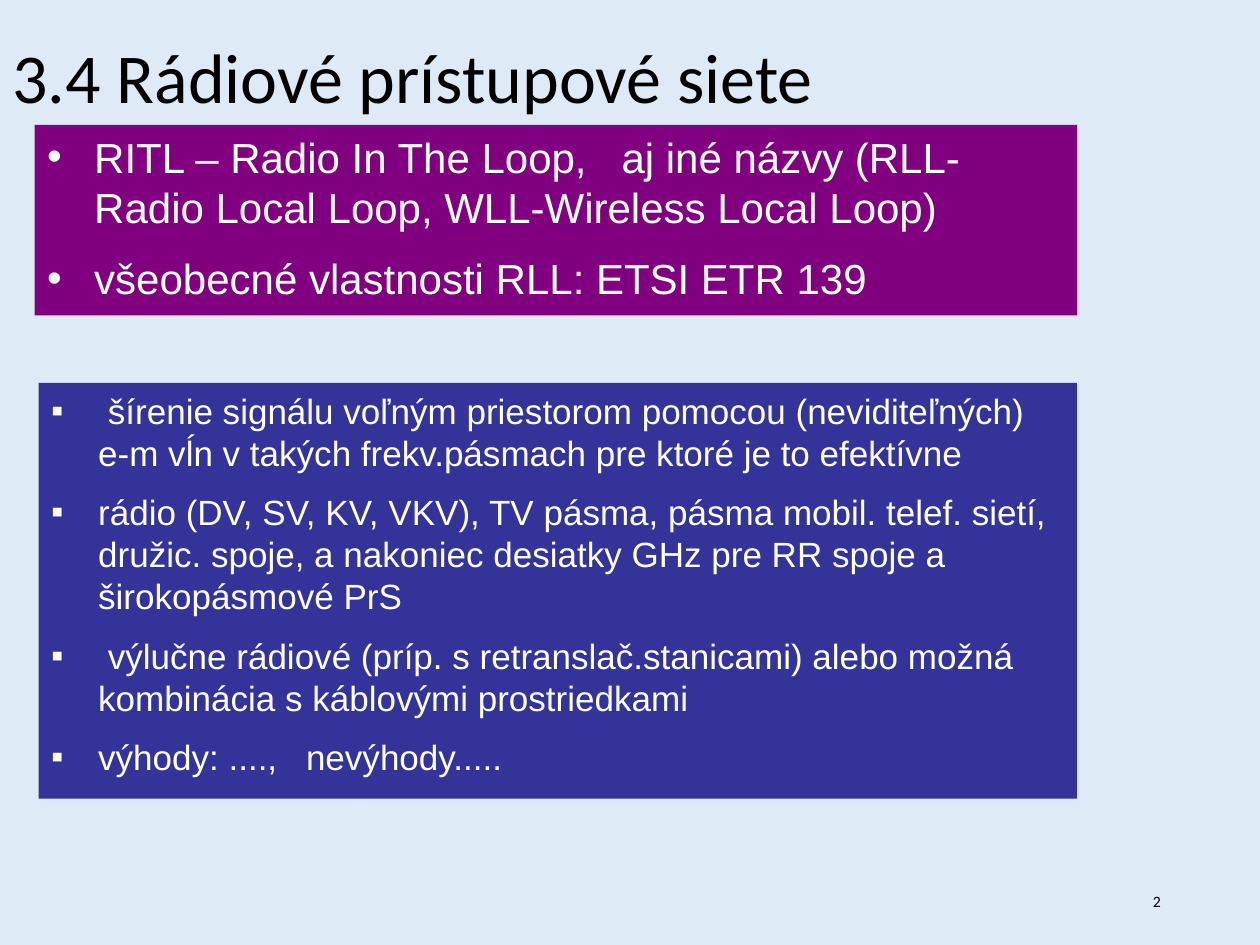
from dataclasses import dataclass

from lxml import etree
from pptx import Presentation
from pptx.dml.color import RGBColor
from pptx.enum.shapes import MSO_SHAPE
from pptx.enum.text import MSO_ANCHOR, PP_ALIGN
from pptx.oxml.ns import qn
from pptx.util import Cm, Pt

RECTANGLE = MSO_SHAPE.RECTANGLE
TOP, MIDDLE = MSO_ANCHOR.TOP, MSO_ANCHOR.MIDDLE
LEFT, RIGHT = PP_ALIGN.LEFT, PP_ALIGN.RIGHT

COLOURS = {
    "background": "DEEBF7",
    "purple": "800080",
    "blue": "333399",
    "light": "FFFFFF",
    "dark": "000000",
}
HANGING = Cm(0.95)


@dataclass
class Label:
    text: str
    place: tuple[float, float, float, float]
    size: int
    align: PP_ALIGN = LEFT
    line_spacing: float = 1.0


@dataclass
class Panel:
    place: tuple[float, float, float, float]
    fill: str
    bullet: str
    size: int
    tab: float  # stop for the gap inside a line, in cm
    items: list[str]


LABELS = [
    Label("3.4 Rádiové prístupové siete", (0, 0.53, 18.59, 2.21), 40, line_spacing=0.9),
    Label("2", (17.93, 17.65, 5.72, 1.02), 9, align=RIGHT),
]
PANELS = [
    Panel((0.78, 7.72, 20.93, 8.38), "blue", "▪", 20, 5.14, [
        " šírenie signálu voľným priestorom pomocou (neviditeľných) "
        "e-m vĺn v takých frekv.pásmach pre ktoré je to efektívne",
        "rádio (DV, SV, KV, VKV), TV pásma, pásma mobil. telef. sietí, "
        "družic. spoje, a nakoniec desiatky GHz pre RR spoje a širokopásmové PrS",
        " výlučne rádiové (príp. s retranslač.stanicami) alebo možná "
        "kombinácia s káblovými prostriedkami",
        "výhody: ....,\tnevýhody.....",
    ]),
    Panel((0.7, 2.52, 21.01, 3.84), "purple", "•", 24, 11.58, [
        "RITL – Radio In The Loop,\taj iné názvy "
        "(RLL-Radio Local Loop, WLL-Wireless Local Loop)",
        "všeobecné vlastnosti RLL: ETSI ETR 139",
    ]),
]


def colour(name: str) -> RGBColor:
    return RGBColor.from_string(COLOURS[name])


def set_format(target, values: dict) -> None:
    for name, value in values.items():
        setattr(target, name, value)


def add_span(para, text: str, font: str, size: int, ink: str) -> None:
    span = para.add_run()
    span.text = text
    set_format(span.font, {"name": font, "size": Pt(size)})
    span.font.color.rgb = colour(ink)


def add_bullet(para, symbol: str, tab: float) -> None:
    properties = para._p.get_or_add_pPr()
    properties.set("marL", str(HANGING))
    properties.set("indent", str(-HANGING))
    etree.SubElement(properties, qn("a:buFont"), typeface="Arial")
    etree.SubElement(properties, qn("a:buChar"), char=symbol)
    if "\t" in "".join(span.text for span in para.runs):
        stops = etree.SubElement(properties, qn("a:tabLst"))
        etree.SubElement(stops, qn("a:tab"), pos=str(Cm(tab)), algn="l")


def draw_label(page, label: Label) -> None:
    box = page.shapes.add_textbox(*map(Cm, label.place))
    set_format(box.text_frame, {"word_wrap": True, "vertical_anchor": MIDDLE})
    para = box.text_frame.paragraphs[0]
    set_format(para, {"alignment": label.align, "line_spacing": label.line_spacing})
    add_span(para, label.text, "Calibri", label.size, "dark")


def draw_panel(page, panel: Panel) -> None:
    box = page.shapes.add_shape(RECTANGLE, *map(Cm, panel.place))
    box.shadow.inherit = False
    box.fill.solid()
    box.fill.fore_color.rgb = colour(panel.fill)
    box.line.fill.background()
    frame = box.text_frame
    set_format(frame, {"word_wrap": True, "vertical_anchor": TOP})
    for number, item in enumerate(panel.items):
        para = frame.add_paragraph() if number else frame.paragraphs[0]
        add_span(para, item, "Arial", panel.size, "light")
        add_bullet(para, panel.bullet, panel.tab)
        gap = Pt(panel.size / 2) if number else Pt(0)
        set_format(para, {"alignment": LEFT, "space_before": gap})


def main() -> None:
    deck = Presentation()
    set_format(deck, {"slide_width": Cm(25.4), "slide_height": Cm(19.05)})
    page = deck.slides.add_slide(deck.slide_layouts[6])
    page.background.fill.solid()
    page.background.fill.fore_color.rgb = colour("background")

    # Title and page number
    for label in LABELS:
        draw_label(page, label)

    # Bulleted panels
    for panel in PANELS:
        draw_panel(page, panel)

    deck.save("out.pptx")


if __name__ == "__main__":
    main()
